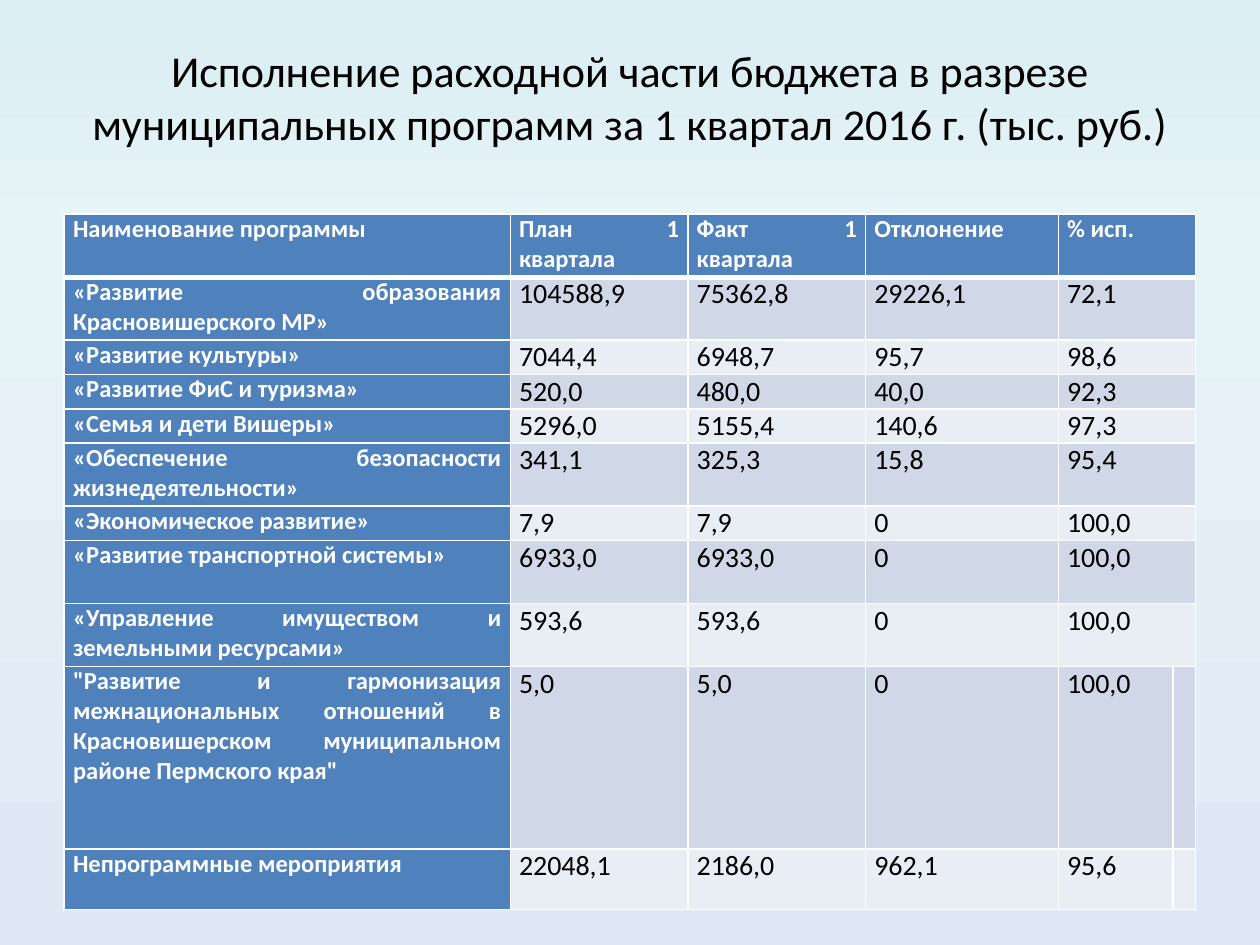
from copy import deepcopy

from lxml.etree import SubElement
from pptx import Presentation
from pptx.dml.color import RGBColor
from pptx.enum.text import MSO_ANCHOR, PP_ALIGN
from pptx.oxml.ns import qn
from pptx.util import Inches, Pt

COLORS = {
    "sky": "DBEEF4",
    "mist": "E6F3F7",
    "lavender": "E1E8F5",
    "header": "4F81BD",
    "odd": "D0D8E8",
    "even": "E9EDF4",
    "white": "FFFFFF",
    "black": "000000",
}
FONT = "Calibri"
TITLE = ("Исполнение расходной части бюджета в разрезе "
         "муниципальных программ за 1 квартал 2016 г. (тыс. руб.)")
COLUMN_WIDTHS = [3.54, 1.41, 1.41, 1.53, 0.91, 0.18]
ROWS = [
    (0.5, "Наименование программы", "План 1 квартала", "Факт 1 квартала", "Отклонение", "% исп."),
    (0.5, "«Развитие образования Красновишерского МР»", "104588,9", "75362,8", "29226,1", "72,1"),
    (0.25, "«Развитие культуры»", "7044,4", "6948,7", "95,7", "98,6"),
    (0.25, "«Развитие ФиС и туризма»", "520,0", "480,0", "40,0", "92,3"),
    (0.25, "«Семья и дети Вишеры»", "5296,0", "5155,4", "140,6", "97,3"),
    (0.5, "«Обеспечение безопасности жизнедеятельности»", "341,1", "325,3", "15,8", "95,4"),
    (0.25, "«Экономическое развитие»", "7,9", "7,9", "0", "100,0"),
    (0.5, "«Развитие транспортной системы»", "6933,0", "6933,0", "0", "100,0"),
    (0.5, "«Управление имуществом и земельными ресурсами»", "593,6", "593,6", "0", "100,0"),
    (1.45, "\"Развитие и гармонизация межнациональных отношений в Красновишерском "
           "муниципальном районе Пермского края\"", "5,0", "5,0", "0", "100,0"),
    (0.48, "Непрограммные мероприятия", "22048,1", "2186,0", "962,1", "95,6"),
]
SPLIT_ROW = 9


def color(name):
    return RGBColor.from_string(COLORS[name])


def paint_background(page):
    fill = page.background.fill
    fill.gradient()
    fill.gradient_angle = 270
    stop_list = page.element.find(".//" + qn("a:gsLst"))
    stop_list.append(deepcopy(stop_list[-1]))
    settings = [(0, "sky"), (0.25, "mist"), (1, "lavender")]
    for stop, (position, name) in zip(fill.gradient_stops, settings):
        stop.position = position
        stop.color.rgb = color(name)


def place_title(page, left, top, width, height):
    title = page.shapes.title
    title.left, title.top, title.width, title.height = left, top, width, height
    frame = title.text_frame
    frame.text = TITLE
    frame.word_wrap = True
    frame.vertical_anchor = MSO_ANCHOR.MIDDLE
    para = frame.paragraphs[0]
    para.alignment = PP_ALIGN.CENTER
    para.font.name = FONT
    para.font.size = Pt(25.2)
    para.font.color.rgb = color("black")


def draw_borders(cell, row_index):
    heavy_side = {0: "lnB", 1: "lnT"}.get(row_index)
    properties = cell._tc.get_or_add_tcPr()
    for side in ("lnL", "lnR", "lnT", "lnB"):
        width = Pt(3 if side == heavy_side else 1)
        line = SubElement(properties, qn("a:" + side), w=str(width))
        fill = SubElement(line, qn("a:solidFill"))
        SubElement(fill, qn("a:srgbClr"), val=COLORS["white"])


def style_cell(cell, row_index, column_index):
    heading = row_index == 0 or column_index == 0
    draw_borders(cell, row_index)
    cell.fill.solid()
    band = "odd" if row_index % 2 else "even"
    cell.fill.fore_color.rgb = color("header" if heading else band)
    cell.margin_left = cell.margin_right = Inches(0.07)
    cell.margin_top = cell.margin_bottom = 0
    para = cell.text_frame.paragraphs[0]
    para.alignment = PP_ALIGN.JUSTIFY
    para.font.name = FONT
    para.font.size = Pt(14 if heading else 16)
    para.font.bold = heading
    para.font.color.rgb = color("white" if heading else "black")


def place_programs(page, left, top, width, height):
    table = page.shapes.add_table(
        len(ROWS), len(COLUMN_WIDTHS), left, top, width, height).table
    for column, column_width in zip(table.columns, COLUMN_WIDTHS):
        column.width = Inches(column_width)
    for row_index, (row_height, *texts) in enumerate(ROWS):
        table.rows[row_index].height = Inches(row_height)
        for column_index, text in enumerate(texts):
            table.cell(row_index, column_index).text = text
        for column_index in range(len(COLUMN_WIDTHS)):
            style_cell(table.cell(row_index, column_index), row_index, column_index)
        if row_index < SPLIT_ROW:
            table.cell(row_index, 4).merge(table.cell(row_index, 5))


def main():
    deck = Presentation()
    deck.slide_width, deck.slide_height = Inches(10), Inches(7.5)
    page = deck.slides.add_slide(deck.slide_layouts[5])
    paint_background(page)
    place_title(page, Inches(0.5), Inches(0.3), Inches(9), Inches(0.93))
    place_programs(page, Inches(0.51), Inches(1.7), Inches(8.98), Inches(5.51))
    deck.save("out.pptx")


if __name__ == "__main__":
    main()
